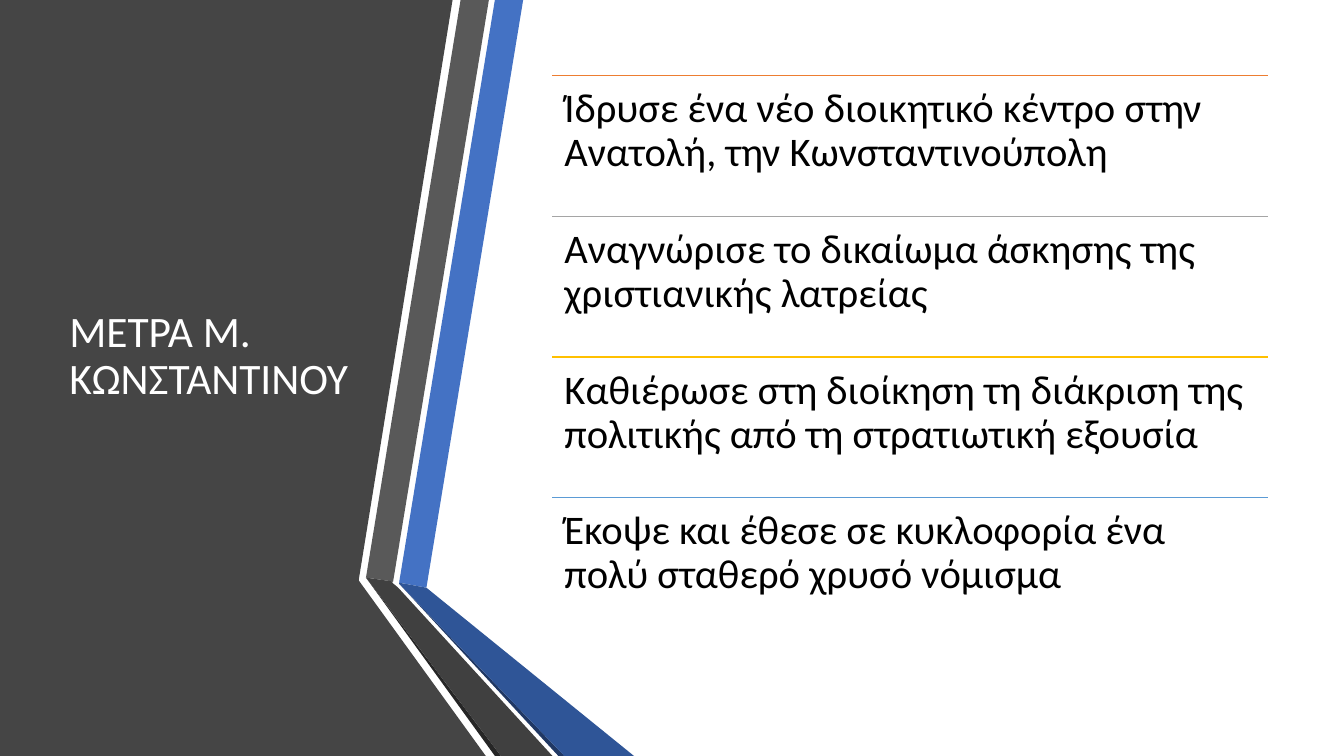
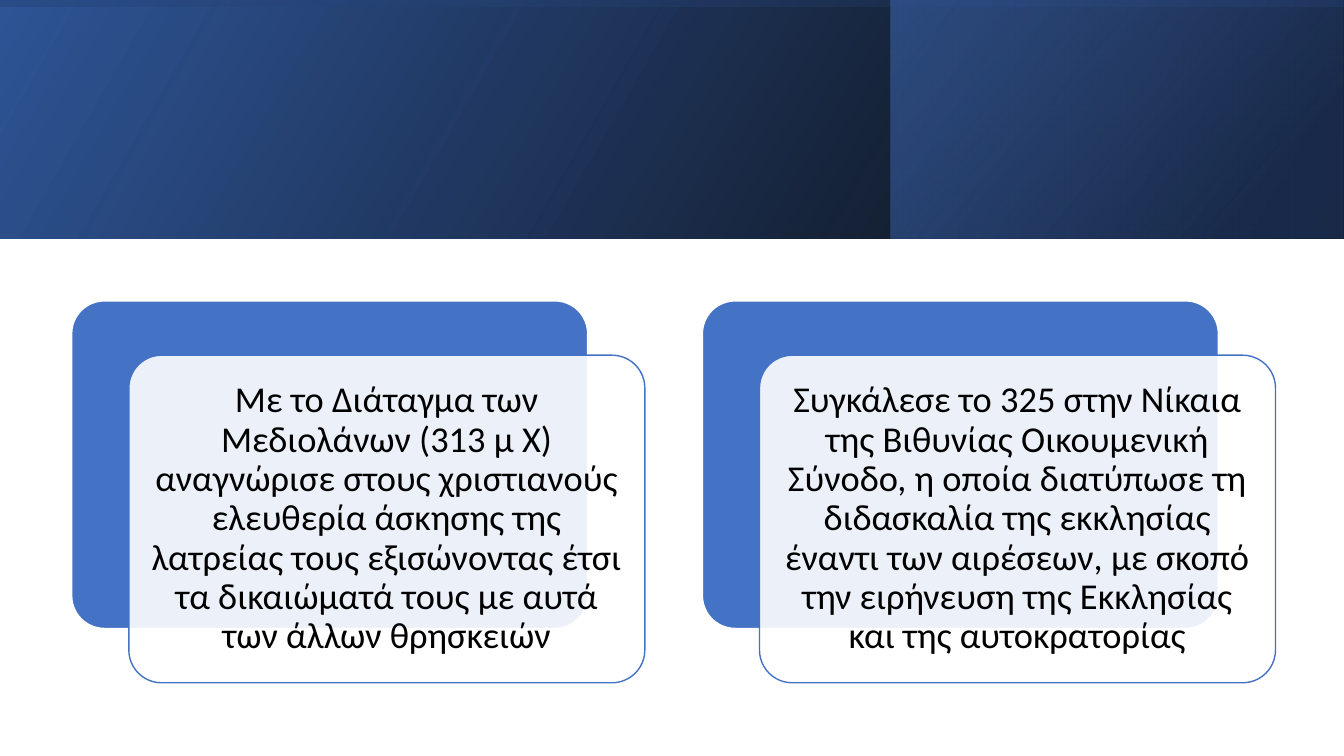
from lxml import etree
from pptx import Presentation
from pptx.dml.color import RGBColor
from pptx.enum.shapes import MSO_CONNECTOR, MSO_SHAPE
from pptx.enum.text import MSO_ANCHOR, PP_ALIGN
from pptx.oxml.ns import qn
from pptx.util import Pt

STRAIGHT = MSO_CONNECTOR.STRAIGHT
RECTANGLE, ROUNDED = MSO_SHAPE.RECTANGLE, MSO_SHAPE.ROUNDED_RECTANGLE
TOP, MIDDLE = MSO_ANCHOR.TOP, MSO_ANCHOR.MIDDLE
LEFT, CENTER = PP_ALIGN.LEFT, PP_ALIGN.CENTER

WHITE = RGBColor(0xFF, 0xFF, 0xFF)
BLACK = RGBColor(0x00, 0x00, 0x00)
BLUE = RGBColor(0x44, 0x72, 0xC4)
DEEP_BLUE = RGBColor(0x2F, 0x55, 0x97)
NAVY = RGBColor(0x20, 0x38, 0x64)
PANEL_GRAY = RGBColor(0x45, 0x45, 0x45)
MID_GRAY = RGBColor(0x59, 0x59, 0x59)
DARK_GRAY = RGBColor(0x40, 0x40, 0x40)
EDGE_GRAY = RGBColor(0x26, 0x26, 0x26)
ORANGE = RGBColor(0xED, 0x7D, 0x31)
SILVER = RGBColor(0xA5, 0xA5, 0xA5)
GOLD = RGBColor(0xFF, 0xC0, 0x00)
SKY = RGBColor(0x5B, 0x9B, 0xD5)
FONT = "Calibri"

WIDTH, HEIGHT = 960, 540


def write(box, text, size, color, align, anchor, inset_x, inset_y):
    frame = box.text_frame
    settings = {
        "word_wrap": True, "vertical_anchor": anchor,
        "margin_left": Pt(inset_x), "margin_right": Pt(inset_x),
        "margin_top": Pt(inset_y), "margin_bottom": Pt(inset_y),
    }
    for name, value in settings.items():
        setattr(frame, name, value)
    para = frame.paragraphs[0]
    para.alignment = align
    para.line_spacing = 0.9
    span = para.add_run()
    span.text = text
    span.font.name = FONT
    span.font.size = Pt(size)
    span.font.color.rgb = color


def set_opacity(shape, *percents):
    colors = shape._element.spPr.iter(qn("a:srgbClr"))
    for color, percent in zip(list(colors), percents):
        etree.SubElement(color, qn("a:alpha")).set("val", str(percent * 1000))


deck = Presentation()
deck.slide_width, deck.slide_height = Pt(WIDTH), Pt(HEIGHT)
blank = deck.slide_layouts[6]

# Slide 1: dark panel and folded ribbons
page = deck.slides.add_slide(blank)
OUTLINES = [
    (PANEL_GRAY, [(0, 0), (323.3, 0), (256.3, 414), (256.3, 414.7),
                  (347, HEIGHT), (0, HEIGHT)]),
    (BLUE, [(285.1, 416.2), (304.6, 419.8), (373.7, 0), (353.5, 0)]),
    (MID_GRAY, [(349.2, 0), (329, 0), (261.4, 412.6), (280.8, 415.4)]),
    (EDGE_GRAY, [(261.4, 412.6), (353.5, HEIGHT), (357.8, HEIGHT)]),
    (NAVY, [(285.1, 416.9), (398.9, HEIGHT), (403.2, HEIGHT)]),
    (DEEP_BLUE, [(285.1, 416.9), (403.2, HEIGHT), (452.9, HEIGHT),
                 (304.6, 419.8), (285.1, 416.2)]),
    (DARK_GRAY, [(394.6, HEIGHT), (284.4, 419.8), (280.1, 416.2),
                 (280.8, 415.4), (261.4, 412.6), (357.8, HEIGHT)]),
]
for color, corners in OUTLINES:
    points = [(Pt(x), Pt(y)) for x, y in corners]
    builder = page.shapes.build_freeform(*points[0])
    builder.add_line_segments(points[1:], close=True)
    ribbon = builder.convert_to_shape()
    ribbon.shadow.inherit = False
    ribbon.fill.solid()
    ribbon.fill.fore_color.rgb = color
    ribbon.line.fill.background()

# Title
box = page.shapes.add_textbox(Pt(42.5), Pt(54), Pt(219), Pt(402))
write(box, "ΜΕΤΡΑ Μ. ΚΩΝΣΤΑΝΤΙΝΟΥ", 31, WHITE, LEFT, MIDDLE, 7.2, 3.6)

# Ruled list of measures
MEASURES = [
    (ORANGE, "Ίδρυσε ένα νέο διοικητικό κέντρο στην Ανατολή, την Κωνσταντινούπολη"),
    (SILVER, "Αναγνώρισε το δικαίωμα άσκησης της χριστιανικής λατρείας"),
    (GOLD, "Καθιέρωσε στη διοίκηση τη διάκριση της πολιτικής από τη στρατιωτική εξουσία"),
    (SKY, "Έκοψε και έθεσε σε κυκλοφορία ένα πολύ σταθερό χρυσό νόμισμα"),
]
LIST_LEFT, LIST_TOP, LIST_WIDTH, ROW = 394.5, 54, 511.2, 100.5
for index, (color, text) in enumerate(MEASURES):
    top = LIST_TOP + index * ROW
    rule = page.shapes.add_connector(
        STRAIGHT, Pt(LIST_LEFT), Pt(top), Pt(LIST_LEFT + LIST_WIDTH), Pt(top))
    rule.line.color.rgb = color
    rule.line.width = Pt(1)
    etree.SubElement(rule._element.spPr, qn("a:effectLst"))
    box = page.shapes.add_textbox(Pt(LIST_LEFT), Pt(top), Pt(LIST_WIDTH), Pt(ROW))
    write(box, text, 29, BLACK, LEFT, TOP, 8.7, 8.7)

# Slide 2: header band of layered gradients
page = deck.slides.add_slide(blank)
BAND = 170.6
TURNED_LEFT, TURNED_TOP = (WIDTH - BAND) / 2, (BAND - WIDTH) / 2
# frame, rotation, angle, stops as (position, color, opacity)
LAYERS = [
    ((0, 0, WIDTH, BAND), 0, 330, [(0, BLACK, 96), (1, DEEP_BLUE, 100)]),
    ((636.5, 0, 322.9, BAND), 0, 320, [(0.19, NAVY, 68), (1, BLUE, 48)]),
    ((TURNED_LEFT, TURNED_TOP, BAND, WIDTH), 270, 350,
     [(0.23, DEEP_BLUE, 16), (0.99, BLACK, 45)]),
]
for frame, rotation, angle, stops in LAYERS:
    layer = page.shapes.add_shape(RECTANGLE, *[Pt(length) for length in frame])
    layer.shadow.inherit = False
    layer.line.fill.background()
    layer.rotation = rotation
    layer._element.spPr.xfrm.set("flipH", "1")
    layer.fill.gradient()
    layer.fill.gradient_angle = 360 - angle
    for stop, (position, color, opacity) in zip(layer.fill.gradient_stops, stops):
        stop.position = position
        stop.color.rgb = color
    set_opacity(layer, *[opacity for position, color, opacity in stops])

# Two cards, each a blue back and a translucent front
CARDS = [
    "Με το Διάταγμα των Μεδιολάνων (313 μ Χ) αναγνώρισε στους χριστιανούς "
    "ελευθερία άσκησης της λατρείας τους εξισώνοντας έτσι τα δικαιώματά τους "
    "με αυτά των άλλων θρησκειών",
    "Συγκάλεσε το 325 στην Νίκαια της Βιθυνίας Οικουμενική Σύνοδο, η οποία "
    "διατύπωσε τη διδασκαλία της εκκλησίας έναντι των αιρέσεων, με σκοπό την "
    "ειρήνευση της Εκκλησίας και της αυτοκρατορίας",
]
CARD_LEFT, CARD_TOP, CARD_WIDTH, CARD_HEIGHT = 51.2, 214.9, 368.6, 234
CARD_PITCH, SHIFT_X, SHIFT_Y = 450.5, 40.8, 38.8
for index, text in enumerate(CARDS):
    left = CARD_LEFT + index * CARD_PITCH
    for step, fill, line in [(0, BLUE, WHITE), (1, WHITE, BLUE)]:
        card = page.shapes.add_shape(
            ROUNDED, Pt(left + step * SHIFT_X), Pt(CARD_TOP + step * SHIFT_Y),
            Pt(CARD_WIDTH), Pt(CARD_HEIGHT))
        card.adjustments[0] = 0.1
        card.shadow.inherit = False
        card.fill.solid()
        card.fill.fore_color.rgb = fill
        card.line.color.rgb = line
        card.line.width = Pt(1)
    set_opacity(card, 90)
    write(card, text, 26, BLACK, CENTER, MIDDLE, 7.8, 7.8)

deck.save("out.pptx")
